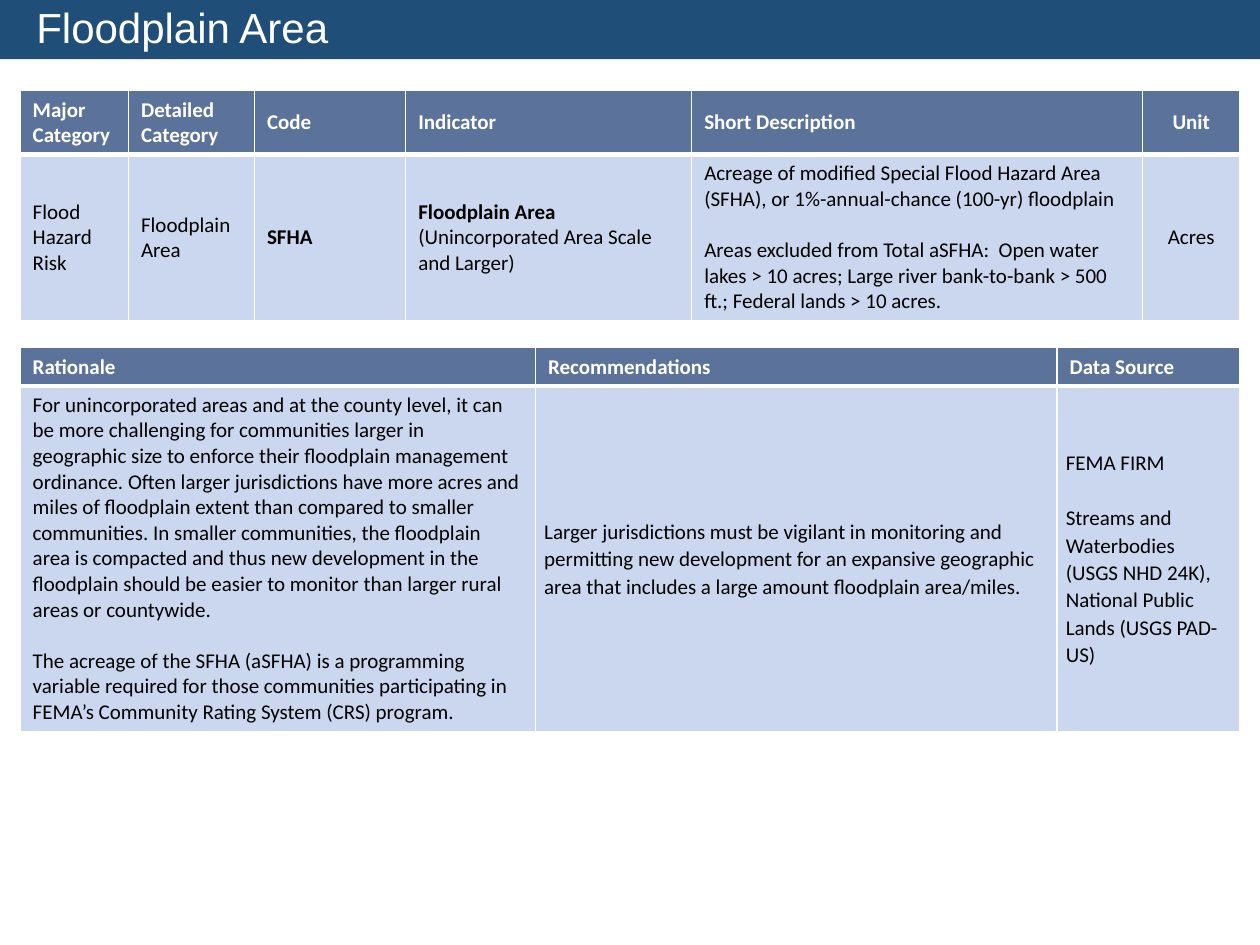
import pptx
import pptx.util
import pptx.dml.color
import pptx.enum.shapes
import pptx.enum.text
import pptx.oxml
import pptx.oxml.ns

Inches = pptx.util.Inches
Pt = pptx.util.Pt
ALIGN = pptx.enum.text.PP_ALIGN
ANCHOR = pptx.enum.text.MSO_ANCHOR

COLORS = {"bar": "1F4E79", "head": "5B739B", "body": "CAD7EE",
          "white": "FFFFFF", "black": "000000"}
LINE_GAP = 14.65
WIDE = 1.07
TIGHT = {"margin_left": Inches(0.07), "margin_right": Inches(0.07),
         "margin_top": 0, "margin_bottom": 0}


def rgb(name):
    return pptx.dml.color.RGBColor.from_string(COLORS[name])


def style(item, values):
    for key, value in values.items():
        setattr(item, key, value)


def paint(item, name):
    item.fill.solid()
    item.fill.fore_color.rgb = rgb(name)


def write(par, text, size, face, color, bold=False):
    run = par.add_run()
    run.text = text
    style(run.font, {"size": Pt(size), "name": face, "bold": bold})
    run.font.color.rgb = rgb(color)


def edge(cell, sides):
    props = cell._tc.get_or_add_tcPr()
    for side, width in sides.items():
        props.append(pptx.oxml.parse_xml(
            f'<a:ln{side} {pptx.oxml.ns.nsdecls("a")} w="{Pt(width)}">'
            f'<a:solidFill><a:srgbClr val="{COLORS["white"]}"/></a:solidFill>'
            f'</a:ln{side}>'))


def fill_cell(cell, pars, head, bold=False, align=ALIGN.LEFT, tight=False):
    edge(cell, {"L": 1, "R": 1, "T": 1 if head else 3, "B": 3 if head else 1})
    paint(cell, "head" if head else "body")
    style(cell, {"vertical_anchor": ANCHOR.MIDDLE, **(TIGHT if tight else {})})
    frame = cell.text_frame
    spacing = WIDE if tight else 1.0
    for i, lines in enumerate(pars):
        par = frame.add_paragraph() if i else frame.paragraphs[0]
        style(par, {"alignment": align, "line_spacing": spacing})
        if i:
            par.space_before = Pt(round(LINE_GAP * spacing, 1))
        for j, line in enumerate(lines):
            if j:
                par.add_line_break()
            write(par, line, 12, "Calibri", "white" if head else "black",
                  head or (bold and j == 0))


def add_grid(slide, top, heights, cols):
    width = sum(col["width"] for col in cols)
    table = slide.shapes.add_table(
        2, len(cols), Inches(0.16), Inches(top), Inches(width),
        Inches(sum(heights))).table
    table.horz_banding = False
    for row, height in zip(table.rows, heights):
        row.height = Inches(height)
    for i, col in enumerate(cols):
        table.columns[i].width = Inches(col["width"])
        align = col.get("align", ALIGN.LEFT)
        fill_cell(table.cell(0, i), [[col["head"]]], True, align=align)
        fill_cell(table.cell(1, i), col["body"], False, col.get("bold", False),
                  align, col.get("tight", False))


def add_title(slide, text):
    bar = slide.shapes.add_shape(
        pptx.enum.shapes.MSO_SHAPE.RECTANGLE, 0, 0, Inches(10), Inches(0.47))
    bar.shadow.inherit = False
    paint(bar, "bar")
    bar.line.fill.background()
    style(bar.text_frame, {"vertical_anchor": ANCHOR.BOTTOM, "word_wrap": True})
    par = bar.text_frame.paragraphs[0]
    style(par, {"alignment": ALIGN.LEFT, "line_spacing": 0.9})
    par._p.get_or_add_pPr().set("marL", str(Inches(0.19)))
    write(par, text, 24, "Arial", "white")


SUMMARY = [
    {"width": 0.86, "head": "Major Category", "body": [["Flood Hazard Risk"]]},
    {"width": 1, "head": "Detailed Category", "body": [["Floodplain Area"]]},
    {"width": 1.2, "head": "Code", "body": [["SFHA"]], "bold": True},
    {"width": 2.27, "head": "Indicator", "bold": True,
     "body": [["Floodplain Area", "(Unincorporated Area Scale and Larger)"]]},
    {"width": 3.58, "head": "Short Description", "body": [
        ["Acreage of modified Special Flood Hazard Area (SFHA), or "
         "1%-annual-chance (100-yr) floodplain"],
        ["Areas excluded from Total aSFHA:  Open water lakes > 10 acres; "
         "Large river bank-to-bank > 500 ft.; Federal lands > 10 acres."]]},
    {"width": 0.77, "head": "Unit", "body": [["Acres"]], "align": ALIGN.CENTER},
]

DETAILS = [
    {"width": 4.09, "head": "Rationale", "body": [
        ["For unincorporated areas and at the county level, it can be more "
         "challenging for communities larger in geographic size to enforce "
         "their floodplain management ordinance. Often larger jurisdictions "
         "have more acres and miles of floodplain extent than compared to "
         "smaller communities. In smaller communities, the floodplain area is "
         "compacted and thus new development in the floodplain should be "
         "easier to monitor than larger rural areas or countywide."],
        ["The acreage of the SFHA (aSFHA) is a programming variable required "
         "for those communities participating in FEMA’s Community Rating "
         "System (CRS) program."]]},
    {"width": 4.14, "head": "Recommendations", "tight": True, "body": [
        ["Larger jurisdictions must be vigilant in monitoring and permitting "
         "new development for an expansive geographic area that includes a "
         "large amount floodplain area/miles."]]},
    {"width": 1.45, "head": "Data Source", "tight": True, "body": [
        ["FEMA FIRM"],
        ["Streams and Waterbodies (USGS NHD 24K), National Public Lands "
         "(USGS PAD-US)"]]},
]


def main():
    deck = pptx.Presentation()
    style(deck, {"slide_width": Inches(10), "slide_height": Inches(7.5)})
    slide = deck.slides.add_slide(deck.slide_layouts[6])
    add_grid(slide, 0.72, [0.5, 1.3], SUMMARY)
    add_grid(slide, 2.76, [0.3, 2.7], DETAILS)
    add_title(slide, "Floodplain Area")
    deck.save("out.pptx")


if __name__ == "__main__":
    main()
